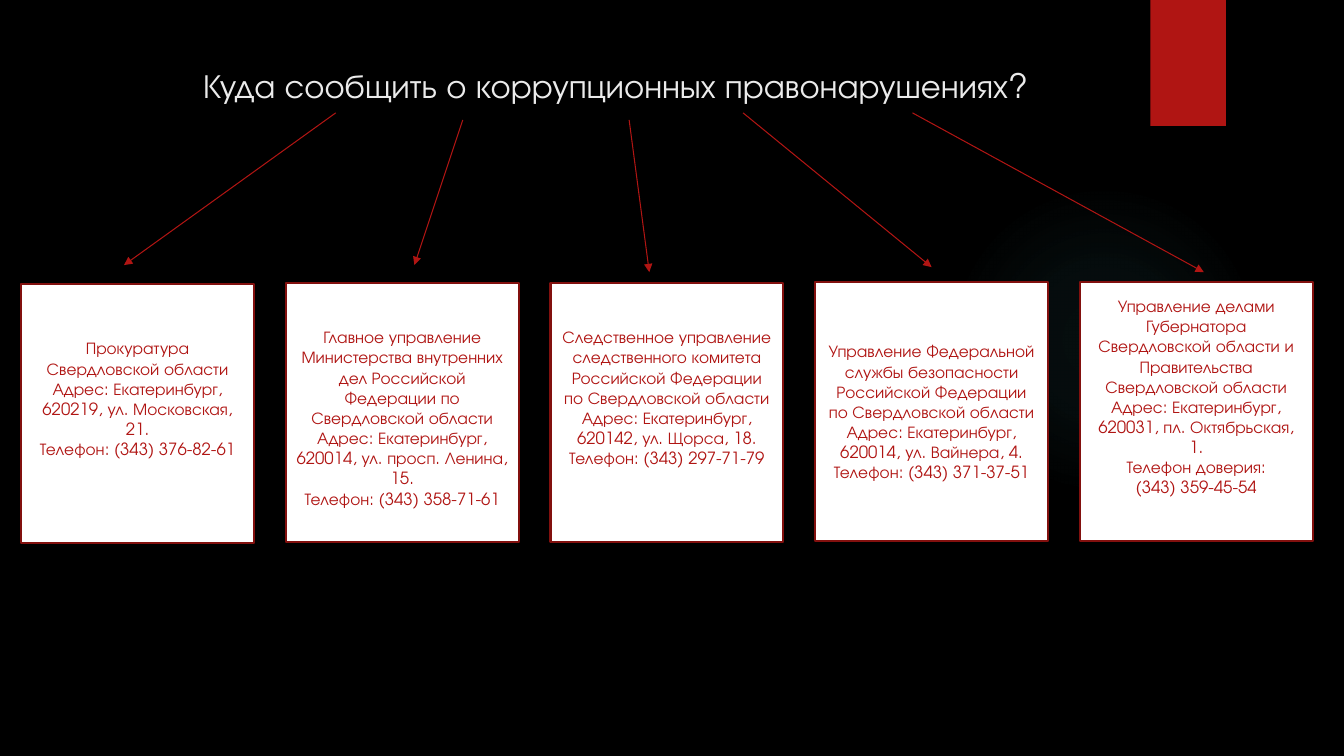
from lxml import etree
from pptx import Presentation
from pptx.dml.color import RGBColor
from pptx.enum.shapes import MSO_CONNECTOR as CONNECTOR, MSO_SHAPE as SHAPE
from pptx.enum.text import MSO_ANCHOR as ANCHOR, MSO_AUTO_SIZE as AUTO_SIZE, PP_ALIGN as ALIGN
from pptx.oxml import parse_xml
from pptx.oxml.ns import nsdecls, qn
from pptx.util import Inches, Pt

FONT = "TeX Gyre Adventor"
BLACK = RGBColor(0x00, 0x00, 0x00)
WHITE = RGBColor(0xFF, 0xFF, 0xFF)
TITLE_GREY = RGBColor(0xEB, 0xEB, 0xEB)
RED = RGBColor(0xB0, 0x15, 0x13)
DARK_RED = RGBColor(0x82, 0x10, 0x0E)
GLOW_TEAL = RGBColor(0x50, 0xB9, 0xC1)
GLOW_STOPS = [(0, 7), (36, 6), (69, 0)]  # position %, opacity %

# Content
QUESTION = "Куда сообщить о коррупционных правонарушениях?"
# lines, card top, top inset, bottom inset, arrow start, arrow end
AGENCIES = [
    (["Прокуратура Свердловской области",
      "Адрес: Екатеринбург, 620219, ул. Московская, 21.",
      "Телефон: (343) 376-82-61"],
     2.82, 0.05, 0.35, (3.33, 1.12), (1.23, 2.63)),
    (["Главное управление Министерства внутренних дел Российской Федерации "
      "по Свердловской области",
      "Адрес: Екатеринбург, 620014, ул. просп. Ленина, 15.",
      "Телефон: (343) 358-71-61"],
     2.81, 0.4, 0.3, (4.59, 1.19), (4.11, 2.63)),
    (["Следственное управление следственного комитета Российской Федерации",
      "по Свердловской области",
      "Адрес: Екатеринбург, 620142, ул. Щорса, 18.",
      "Телефон: (343) 297-71-79"],
     2.81, 0.05, 0.35, (6.24, 1.19), (6.44, 2.7)),
    (["Управление Федеральной службы безопасности Российской Федерации",
      "по Свердловской области",
      "Адрес: Екатеринбург, 620014, ул. Вайнера, 4.",
      "Телефон: (343) 371-37-51"],
     2.8, 0.05, 0.05, (7.37, 1.12), (9.24, 2.65)),
    (["Управление делами Губернатора Свердловской области и Правительства "
      "Свердловской области",
      "Адрес: Екатеринбург, 620031, пл. Октябрьская, 1.",
      "Телефон доверия:",
      "(343) 359-45-54"],
     2.8, 0.05, 0.35, (9.05, 1.12), (11.94, 2.7)),
]
CARD_LEFT, CARD_STEP, CARD_WIDTH, CARD_HEIGHT = 0.21, 2.625, 2.31, 2.57


def add_plain_shape(slide, kind, left, top, width, height):
    shape = slide.shapes.add_shape(
        kind, Inches(left), Inches(top), Inches(width), Inches(height))
    shape.shadow.inherit = False
    shape.line.fill.background()
    return shape


def style(paragraph, size, color):
    paragraph.alignment = ALIGN.CENTER
    paragraph.font.name = FONT
    paragraph.font.size = Pt(size)
    paragraph.font.color.rgb = color


def add_glow(slide):
    glow = add_plain_shape(slide, SHAPE.OVAL, 9.41, 1.83, 3.08, 3.08)
    stops = "".join(
        f'<a:gs pos="{pos * 1000}"><a:srgbClr val="{GLOW_TEAL}">'
        f'<a:alpha val="{opacity * 1000}"/></a:srgbClr></a:gs>'
        for pos, opacity in GLOW_STOPS)
    gradient = parse_xml(
        f'<a:gradFill {nsdecls("a")}><a:gsLst>{stops}</a:gsLst><a:path path="circle">'
        '<a:fillToRect l="50000" t="50000" r="50000" b="50000"/></a:path></a:gradFill>')
    glow._element.spPr.find(qn("a:prstGeom")).addnext(gradient)


def add_card(slide, left, top, lines, top_inset, bottom_inset):
    card = add_plain_shape(slide, SHAPE.RECTANGLE, left, top, CARD_WIDTH, CARD_HEIGHT)
    card.fill.solid()
    card.fill.fore_color.rgb = WHITE
    card.line.color.rgb = DARK_RED
    card.line.width = Pt(1.5)
    frame = card.text_frame
    frame.word_wrap = True
    frame.vertical_anchor = ANCHOR.MIDDLE
    frame.margin_top, frame.margin_bottom = Inches(top_inset), Inches(bottom_inset)
    frame.text = "\n".join(lines)
    for paragraph in frame.paragraphs:
        style(paragraph, 12, RED)


def add_arrow(slide, start, end):
    arrow = slide.shapes.add_connector(
        CONNECTOR.STRAIGHT, *(Inches(value) for value in start + end))
    arrow.line.color.rgb = RED
    arrow.line.width = Pt(0.75)
    etree.SubElement(arrow.line._get_or_add_ln(), qn("a:tailEnd"), type="triangle")
    etree.SubElement(arrow._element.spPr, qn("a:effectLst"))


def main():
    prs = Presentation()
    prs.slide_width, prs.slide_height = Inches(13.33), Inches(7.5)
    slide = prs.slides.add_slide(prs.slide_layouts[5])
    slide.background.fill.solid()
    slide.background.fill.fore_color.rgb = BLACK

    # Backdrop
    add_glow(slide)
    ribbon = add_plain_shape(slide, SHAPE.RECTANGLE, 11.41, 0, 0.75, 1.25)
    ribbon.fill.solid()
    ribbon.fill.fore_color.rgb = RED

    # Title
    title = slide.shapes.title
    title.left, title.top = Inches(0.96), Inches(0.59)
    title.width, title.height = Inches(10.29), Inches(1.53)
    title.text_frame.text = QUESTION
    title.text_frame.word_wrap = True
    title.text_frame.auto_size = AUTO_SIZE.NONE
    title.text_frame.vertical_anchor = ANCHOR.TOP
    style(title.text_frame.paragraphs[0], 24, TITLE_GREY)

    # Agency cards and the arrows leading to them
    for index, (lines, top, top_inset, bottom_inset, start, end) in enumerate(AGENCIES):
        add_card(slide, CARD_LEFT + index * CARD_STEP, top, lines, top_inset, bottom_inset)
        add_arrow(slide, start, end)

    prs.save("out.pptx")


if __name__ == "__main__":
    main()
